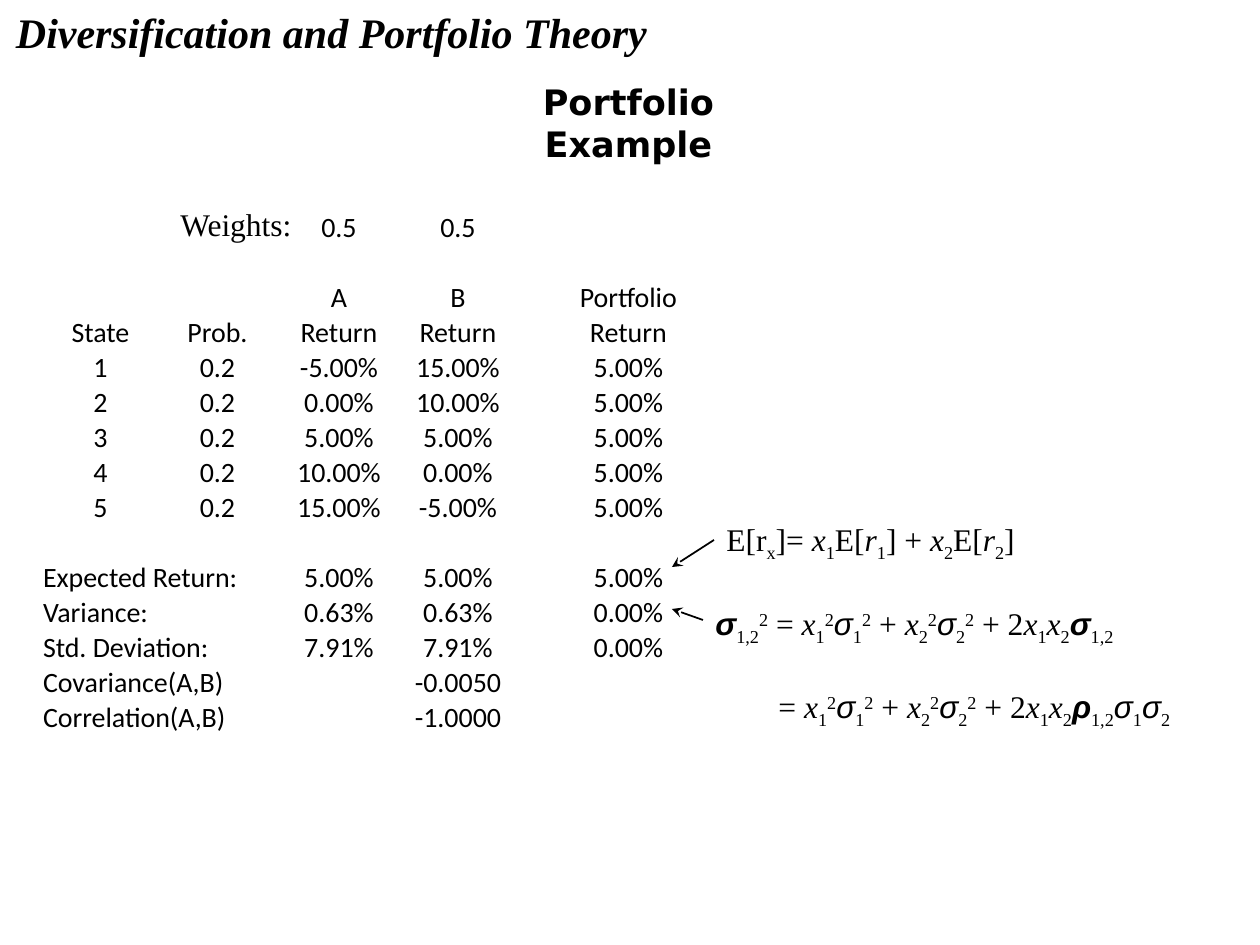
from dataclasses import dataclass

from lxml.etree import SubElement
from pptx import Presentation
from pptx.dml.color import RGBColor
from pptx.enum.shapes import MSO_CONNECTOR
from pptx.enum.text import MSO_ANCHOR, MSO_AUTO_SIZE, PP_ALIGN
from pptx.oxml.ns import qn
from pptx.util import Emu, Pt


@dataclass(frozen=True)
class Theme:
    ink: RGBColor = RGBColor(0, 0, 0)
    serif: str = "Times New Roman"
    symbol: str = "Arial"
    heading: str = "DejaVu Sans"
    grid: str = "Calibri"
    title_size: int = 24
    heading_size: int = 20
    formula_size: int = 18
    grid_size: int = 16
    arrow_width: int = 1


THEME = Theme()
PX_PER_INCH = 126

COLUMN_WIDTHS = [117, 117, 126, 112, 49, 131]
ROW_HEIGHT = 35
RETURNS = ["-5.00%", "0.00%", "5.00%", "10.00%", "15.00%"]
TABLE_ROWS = [
    ["", "", "0.5", "0.5", "", ""],
    [""] * 6,
    ["", "", "A", "B", "", "Portfolio"],
    ["State", "Prob.", "Return", "Return", "", "Return"],
    *[[str(state), "0.2", a, b, "", "5.00%"]
      for state, (a, b) in enumerate(zip(RETURNS, reversed(RETURNS)), 1)],
    [""] * 6,
    ["Expected Return:", "", "5.00%", "5.00%", "", "5.00%"],
    ["Variance:", "", "0.63%", "0.63%", "", "0.00%"],
    ["Std. Deviation:", "", "7.91%", "7.91%", "", "0.00%"],
    ["Covariance(A,B)", "", "", "-0.0050", "", ""],
    ["Correlation(A,B)", "", "", "-1.0000", "", ""],
]
FIRST_SUMMARY_ROW = 10
MERGED_LABELS = {"Expected Return:", "Std. Deviation:", "Covariance(A,B)", "Correlation(A,B)"}

# Formula parts are (text, style) pairs.
PLAIN, ITALIC, SUB, SUP, GREEK, BOLD_GREEK = range(6)
BASELINES = {SUB: "-25000", SUP: "30000"}


def indexed(letter, index, style=ITALIC):
    return [(letter, style), (index, SUB)]


def weighted_return(index):
    return indexed("x", index) + [("E[", PLAIN)] + indexed("r", index)


def weighted_variance(index):
    square = [("2", SUP)]
    return indexed("x", index) + square + indexed("σ", index, GREEK) + square


EXPECTED_RETURN = [("E[r", PLAIN), ("x", SUB), ("]= ", PLAIN), *weighted_return("1"),
                   ("] + ", PLAIN), *weighted_return("2"), ("]", PLAIN)]
VARIANCE_SUM = [*weighted_variance("1"), (" + ", PLAIN), *weighted_variance("2"),
                (" + 2", PLAIN), *indexed("x", "1"), *indexed("x", "2")]
COVARIANCE_FORM = [*indexed("σ", "1,2", BOLD_GREEK), ("2", SUP), (" = ", PLAIN),
                   *VARIANCE_SUM, *indexed("σ", "1,2", BOLD_GREEK)]
CORRELATION_FORM = [("= ", PLAIN), *VARIANCE_SUM, *indexed("ρ", "1,2", BOLD_GREEK),
                    *indexed("σ", "1", GREEK), *indexed("σ", "2", GREEK)]


def px(length):
    return Emu(round(length * 914400 / PX_PER_INCH))


def style_font(font, name, size, bold=False, italic=False):
    font.name = name
    font.size = Pt(size)
    font.bold = bold
    font.italic = italic
    font.color.rgb = THEME.ink


def add_box(slide, left, top, width, height):
    frame = slide.shapes.add_textbox(px(left), px(top), px(width), px(height)).text_frame
    frame.word_wrap = False
    frame.auto_size = MSO_AUTO_SIZE.SHAPE_TO_FIT_TEXT
    return frame


def add_label(slide, bounds, text, name, size, align=PP_ALIGN.LEFT, **emphasis):
    frame = add_box(slide, *bounds)
    frame.text = text
    paragraph = frame.paragraphs[0]
    paragraph.alignment = align
    style_font(paragraph.runs[0].font, name, size, **emphasis)
    return frame


def write_formula(paragraph, parts):
    for text, style in parts:
        run = paragraph.add_run()
        run.text = text
        greek = style in (GREEK, BOLD_GREEK)
        style_font(run.font, THEME.symbol if greek else THEME.serif, THEME.formula_size,
                   bold=style == BOLD_GREEK, italic=greek or style == ITALIC)
        if style in BASELINES:
            run.font._element.set("baseline", BASELINES[style])


def fill_cell(cell, text, align):
    cell.fill.background()
    cell.vertical_anchor = MSO_ANCHOR.BOTTOM
    cell.margin_left = cell.margin_right = cell.margin_top = px(1)
    cell.margin_bottom = 0
    cell.text = text
    paragraph = cell.text_frame.paragraphs[0]
    paragraph.alignment = align
    for run in paragraph.runs:
        style_font(run.font, THEME.grid, THEME.grid_size)
    if not text:
        # Keeps an empty cell from stretching its row.
        SubElement(paragraph._p, qn("a:endParaRPr"), sz=str(THEME.grid_size * 100))


def add_returns_table(slide, left, top):
    table = slide.shapes.add_table(
        len(TABLE_ROWS), len(COLUMN_WIDTHS), px(left), px(top),
        px(sum(COLUMN_WIDTHS)), px(ROW_HEIGHT * len(TABLE_ROWS))).table
    table.first_row = table.horz_banding = False
    for column, width in zip(table.columns, COLUMN_WIDTHS):
        column.width = px(width)
    for r, values in enumerate(TABLE_ROWS):
        table.rows[r].height = px(ROW_HEIGHT)
        for c, value in enumerate(values):
            is_label = c == 0 and r >= FIRST_SUMMARY_ROW
            fill_cell(table.cell(r, c), value, PP_ALIGN.LEFT if is_label else PP_ALIGN.CENTER)
        if values[0] in MERGED_LABELS:
            table.cell(r, 0).merge(table.cell(r, 1))


def add_arrow(slide, start, end):
    arrow = slide.shapes.add_connector(MSO_CONNECTOR.STRAIGHT, *map(px, start + end))
    arrow.line.color.rgb = THEME.ink
    arrow.line.width = Pt(THEME.arrow_width)
    SubElement(arrow.line._get_or_add_ln(), qn("a:tailEnd"), type="stealth")
    SubElement(arrow._element.spPr, qn("a:effectLst"))


def main():
    deck = Presentation()
    deck.slide_width, deck.slide_height = px(1260), px(945)
    slide = deck.slides.add_slide(deck.slide_layouts[6])

    add_label(slide, (0, 0, 663, 64), "Diversification and Portfolio Theory",
              THEME.serif, THEME.title_size, PP_ALIGN.CENTER, bold=True, italic=True)
    heading = add_label(slide, (441, 74, 375, 54), "Portfolio Example",
                        THEME.heading, THEME.heading_size, PP_ALIGN.CENTER, bold=True)
    heading.word_wrap = True
    heading.margin_left = heading.margin_right = px(24)

    add_returns_table(slide, 42, 210)

    expected = add_box(slide, 714, 514, 339, 50)
    write_formula(expected.paragraphs[0], EXPECTED_RETURN)

    variance = add_box(slide, 703, 598, 503, 127)
    write_formula(variance.paragraphs[0], COVARIANCE_FORM)
    correlation = variance.add_paragraph()
    correlation.space_before = Pt(23)
    correlation._p.get_or_add_pPr().set("marL", str(px(63)))
    write_formula(correlation, CORRELATION_FORM)

    add_arrow(slide, (714, 540), (672, 567))
    add_arrow(slide, (703, 620), (672, 609))
    add_label(slide, (168, 199, 137, 50), "Weights:", THEME.serif, THEME.formula_size)

    deck.save("out.pptx")


if __name__ == "__main__":
    main()
